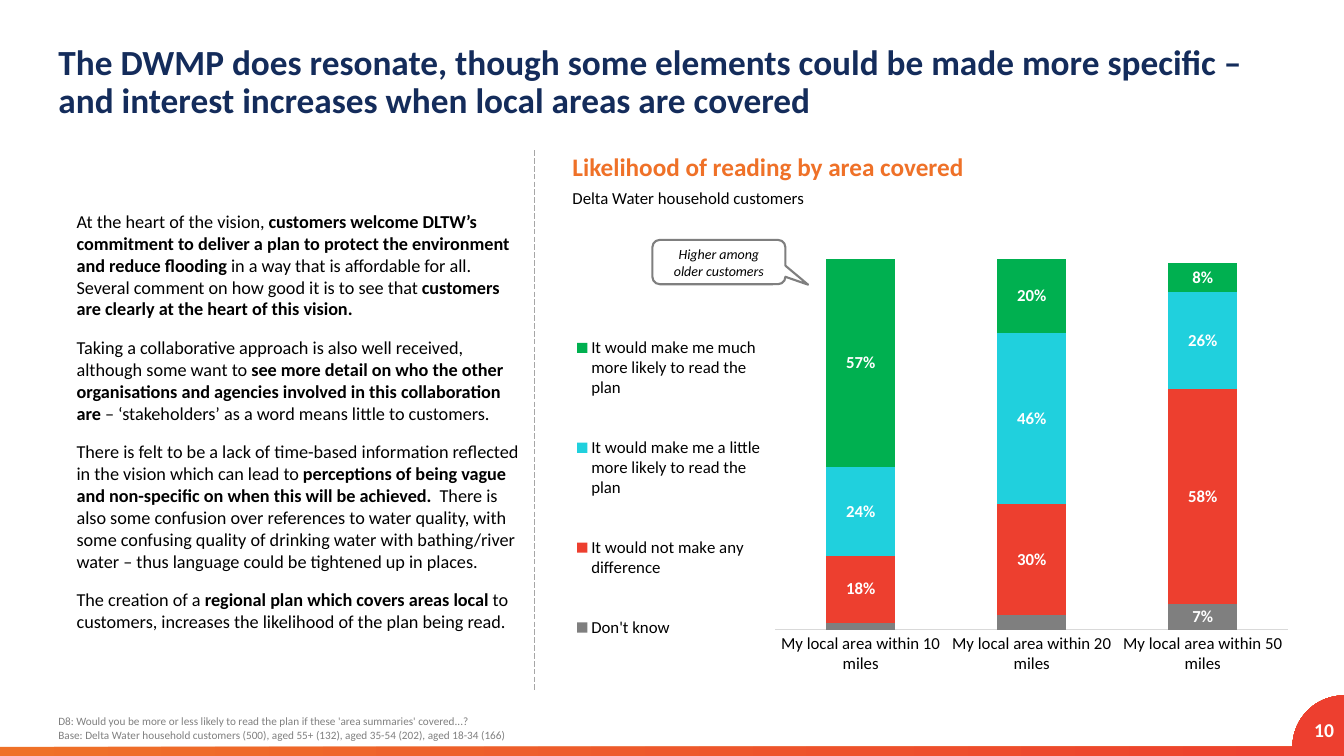
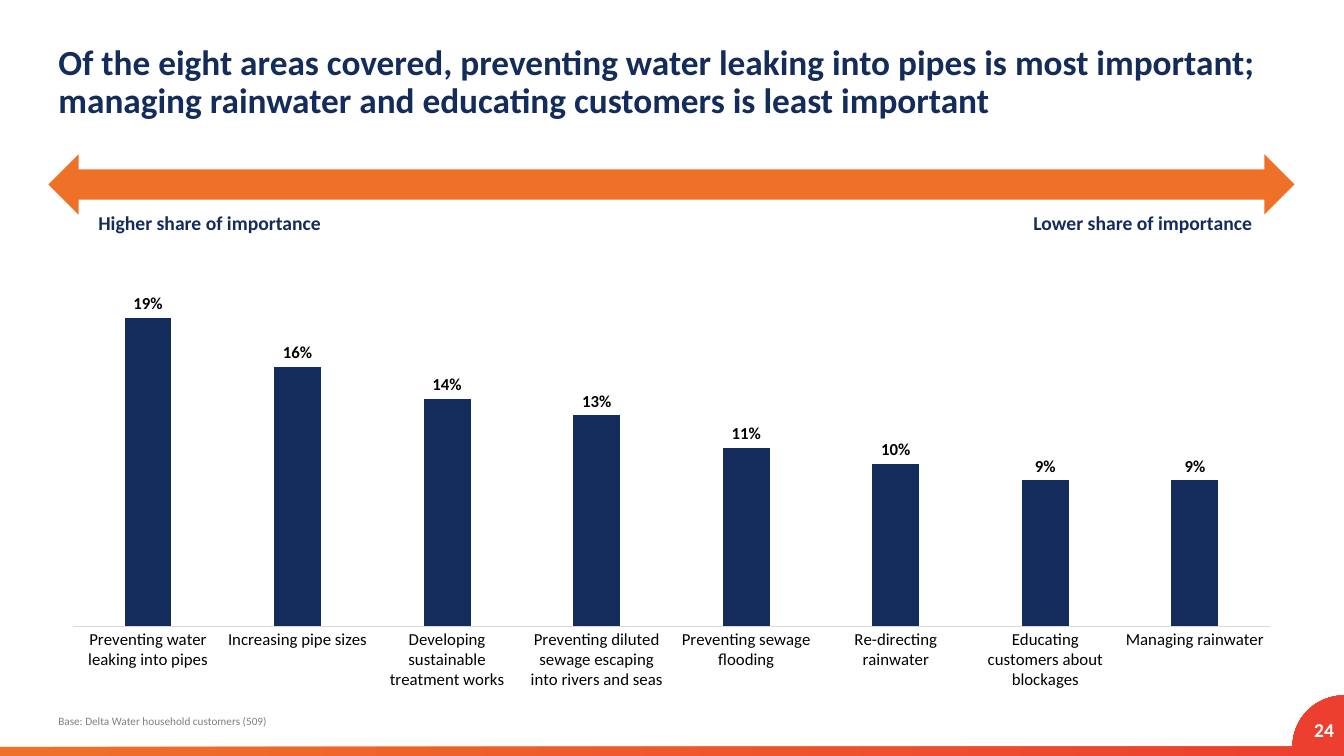
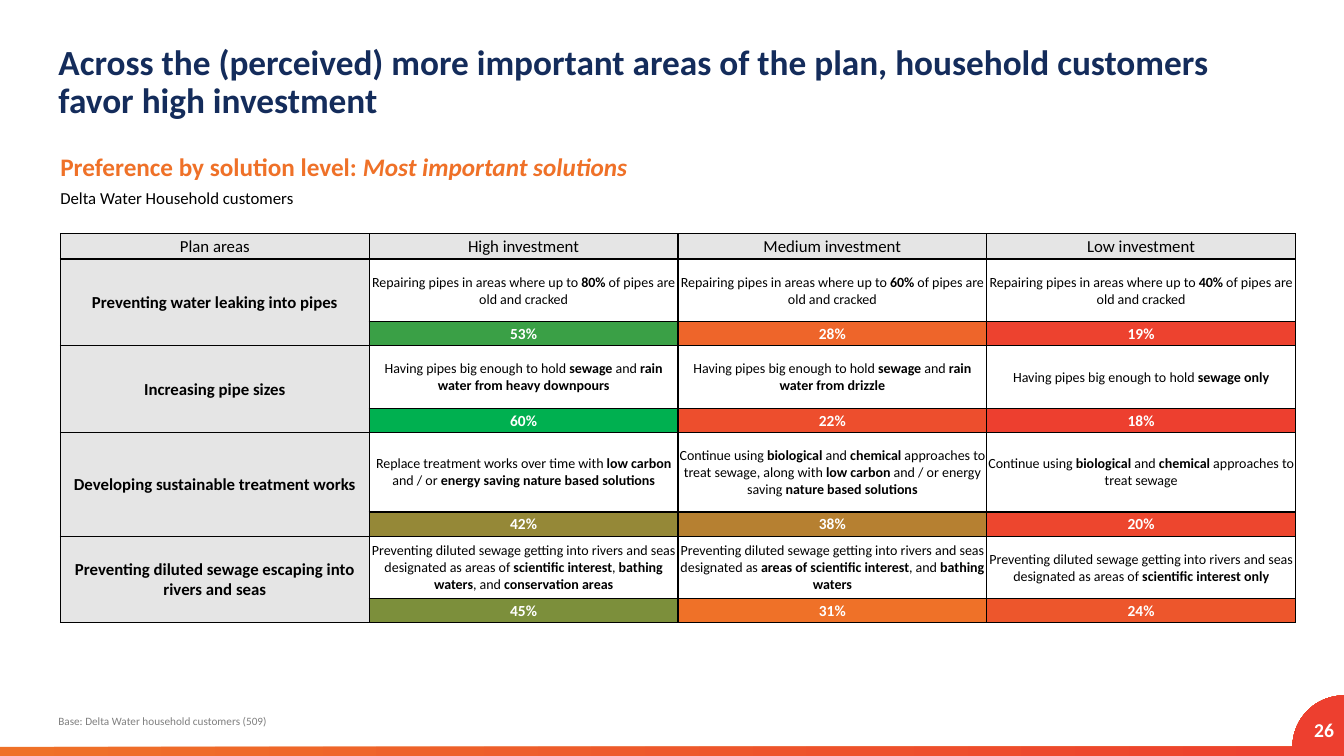
import math

from lxml import etree
from pptx import Presentation
from pptx import util as u
from pptx.chart import data
from pptx.dml.color import RGBColor
from pptx.enum import chart as charts
from pptx.enum import dml, shapes, text
from pptx.oxml import ns, parse_xml

FONT = "Calibri"
NAVY = RGBColor(0x14, 0x2C, 0x5B)
ORANGE = RGBColor(0xEF, 0x71, 0x28)
RED = RGBColor(0xED, 0x3F, 0x2F)
CYAN = RGBColor(0x20, 0xD0, 0xDD)
GREEN = RGBColor(0x00, 0xB0, 0x50)
GREY = RGBColor(0x7F, 0x7F, 0x7F)
DIVIDER_GREY = RGBColor(0xA6, 0xA6, 0xA6)
AXIS_GREY = RGBColor(0xD9, 0xD9, 0xD9)
HEADER_GREY = RGBColor(0xE5, 0xE5, 0xE5)
BLACK = RGBColor(0, 0, 0)
WHITE = RGBColor(0xFF, 0xFF, 0xFF)

WIDTH, HEIGHT = 13.33, 7.5
TITLE_AND_BODY, TITLE_ONLY = 1, 5
CENTER, RIGHT = text.PP_ALIGN.CENTER, text.PP_ALIGN.RIGHT
MIDDLE = text.MSO_ANCHOR.MIDDLE

VISION = [
    "At the heart of the vision, **customers welcome DLTW’s commitment to deliver a plan to "
    "protect the environment and reduce flooding **in a way that is affordable for all. Several "
    "comment on how good it is to see that **customers are clearly at the heart of this vision.**",
    "Taking a collaborative approach is also well received, although some want to **see more "
    "detail on who the other organisations and agencies involved in this collaboration are** – "
    "‘stakeholders’ as a word means little to customers.",
    "There is felt to be a lack of time-based information reflected in the vision which can lead "
    "to **perceptions of being vague and non-specific on when this will be achieved.  **There is "
    "also some confusion over references to water quality, with some confusing quality of "
    "drinking water with bathing/river water – thus language could be tightened up in places.",
    "The creation of a **regional plan which covers areas local **to customers, increases the "
    "likelihood of the plan being read.",
]

LIKELIHOOD = [
    ("Don't know", (0.02, 0.04, 0.07), GREY),
    ("It would not make any difference", (0.18, 0.3, 0.58), RED),
    ("It would make me a little more likely to read the plan", (0.24, 0.46, 0.26), CYAN),
    ("It would make me much more likely to read the plan", (0.57, 0.2, 0.08), GREEN),
]

IMPORTANCE = {
    "Preventing water leaking into pipes": 0.19,
    "Increasing pipe sizes": 0.16,
    "Developing sustainable treatment works": 0.14,
    "Preventing diluted sewage escaping into rivers and seas": 0.13,
    "Preventing sewage flooding": 0.11,
    "Re-directing rainwater": 0.1,
    "Educating customers about blockages": 0.09,
    "Managing rainwater": 0.09,
}

REPAIRING = "Repairing pipes in areas where up to **{}** of pipes are old and cracked"
PIPES = "Having pipes big enough to hold **sewage"
CONTINUE = "Continue using **biological** and **chemical** approaches to treat sewage"
SEWAGE = "Preventing diluted sewage getting into rivers and seas designated as "
HEADINGS = ["Plan areas", "High investment", "Medium investment", "Low investment"]
PLAN_AREAS = [
    ("Preventing water leaking into pipes", 0.62, [
        (REPAIRING.format("80%"), "53%", "3AA046"),
        (REPAIRING.format("60%"), "28%", "EE652A"),
        (REPAIRING.format("40%"), "19%", "ED422F")]),
    ("Increasing pipe sizes", 0.62, [
        (PIPES + "** and **rain water from heavy downpours**", "60%", "00B050"),
        (PIPES + "** and **rain water from drizzle**", "22%", "ED4E2D"),
        (PIPES + " only**", "18%", "ED3F2F")]),
    ("Developing sustainable treatment works", 0.79, [
        ("Replace treatment works over time with **low carbon **and / or "
         "**energy saving nature based solutions**", "42%", "958837"),
        (CONTINUE + ", along with **low carbon** and / or energy saving "
         "**nature based solutions**", "38%", "B68031"),
        (CONTINUE, "20%", "ED462E")]),
    ("Preventing diluted sewage escaping into rivers and seas", 0.62, [
        (SEWAGE + "areas of **scientific interest**, **bathing waters**, and "
         "**conservation areas**", "45%", "7C8F3B"),
        (SEWAGE + "**areas of scientific interest**, and **bathing waters**", "31%", "EF7128"),
        (SEWAGE + "areas of **scientific interest only**", "24%", "ED562C")]),
]


def set_format(target, formats):
    for name, value in formats.items():
        setattr(target, name, value)


def inches(box):
    return [u.Inches(value) for value in box]


def place(shape, box):
    set_format(shape, dict(zip(("left", "top", "width", "height"), inches(box))))


def set_font(font, size, color, **formats):
    set_format(font, {"name": FONT, "size": u.Pt(size), **formats})
    font.color.rgb = color


def fill_paragraph(paragraph, content, size, color, bold=False, italic=False, **formats):
    set_format(paragraph, formats)
    for index, part in enumerate(content.split("**")):
        if part:
            run = paragraph.add_run()
            run.text = part
            set_font(run.font, size, color, bold=bold or index % 2 == 1, italic=italic)


def fill_frame(frame, lines, size, color, frame_formats=None, **formats):
    set_format(frame, {"word_wrap": True, "auto_size": text.MSO_AUTO_SIZE.NONE,
                       **(frame_formats or {})})
    for index, line in enumerate(lines):
        paragraph = frame.add_paragraph() if index else frame.paragraphs[0]
        fill_paragraph(paragraph, line, size, color, **formats)


def add_text(slide, box, lines, size, color, frame_formats=None, **formats):
    shape = slide.shapes.add_textbox(*inches(box))
    fill_frame(shape.text_frame, lines, size, color, frame_formats, **formats)
    return shape


def add_master_band(presentation, slide):
    edge, radius = 7.41, 0.51
    angles = [math.radians(90 * step / 24) for step in range(25)]
    curve = [(WIDTH - radius * math.cos(angle), edge - radius * math.sin(angle))
             for angle in angles]
    points = [tuple(inches(point)) for point in [(WIDTH, HEIGHT), (0, HEIGHT), (0, edge), *curve]]
    builder = slide.shapes.build_freeform(*points[0])
    builder.add_line_segments(points[1:], close=True)
    band = builder.convert_to_shape()
    band.shadow.inherit = False
    band.line.fill.background()
    band.fill.gradient()
    band.fill.gradient_angle = 0
    for stop, position, color in zip(band.fill.gradient_stops, (0, 1), (ORANGE, RED)):
        stop.position = position
        stop.color.rgb = color
    presentation.slide_master.element.cSld.spTree.append(band.element)


def add_slide(presentation, layout, title, number, footer, title_width=12.36):
    slide = presentation.slides.add_slide(presentation.slide_layouts[layout])
    place(slide.shapes.title, (0.48, 0.4, title_width, 0.6))
    fill_frame(slide.shapes.title.text_frame, [title], 25.2, NAVY,
               {"vertical_anchor": text.MSO_ANCHOR.TOP},
               bold=True, line_spacing=0.9, alignment=text.PP_ALIGN.LEFT)
    add_text(slide, (12.39, 7.04, 0.94, 0.4), [str(number)], 14, WHITE,
             {"vertical_anchor": MIDDLE, "margin_top": 0, "margin_bottom": 0},
             bold=True, alignment=RIGHT)
    add_text(slide, (0.48, 7.02, 11.9, 0.36), footer, 8, GREY, line_spacing=1.1)
    return slide


def add_heading(slide, left, top, width, heading, subheading):
    spacing = {"line_spacing": 1.2, "space_after": u.Pt(12)}
    box = add_text(slide, (left, top, width, 0.38), [heading], 18, ORANGE,
                   {"margin_bottom": 0}, bold=True, **spacing)
    add_text(slide, (left, top + 0.38, width, 0.32), [subheading], 12, BLACK, **spacing)
    return box.text_frame.paragraphs[0]


def add_column_chart(slide, box, kind, categories, series, maximum, gap, overlap,
                     label_color, label_position=None):
    chart_data = data.CategoryChartData(number_format="0%")
    chart_data.categories = categories
    for name, values, _ in series:
        chart_data.add_series(name, values)
    chart = slide.shapes.add_chart(kind, *inches(box), chart_data).chart
    set_format(chart, {"has_title": False, "has_legend": False})
    set_font(chart.font, 10, BLACK)
    set_format(chart.value_axis, {"visible": False, "has_major_gridlines": False,
                                  "minimum_scale": 0, "maximum_scale": maximum})
    axis = chart.category_axis
    axis.major_tick_mark = charts.XL_TICK_MARK.NONE
    set_font(axis.tick_labels.font, 12, BLACK)
    axis.format.line.color.rgb = AXIS_GREY
    axis.format.line.width = u.Pt(0.75)
    plot = chart.plots[0]
    set_format(plot, {"gap_width": gap, "overlap": overlap, "vary_by_categories": False})
    for column, (_, _, color) in zip(plot.series, series):
        column.format.fill.solid()
        column.format.fill.fore_color.rgb = color
        labels = column.data_labels
        set_format(labels, {"show_value": True, "number_format_is_linked": False,
                            "number_format": '[<0.05]"";0%'})
        if label_position is not None:
            labels.position = label_position
        set_font(labels.font, 12, label_color, bold=True)
    return chart


def set_chart_layout(parent, box, inner=False):
    for old in parent.findall(ns.qn("c:layout")):
        parent.remove(old)
    target = '<c:layoutTarget val="inner"/>' if inner else ""
    modes = "".join(f'<c:{axis}Mode val="edge"/>' for axis in "xy")
    sizes = "".join(f'<c:{name} val="{value}"/>' for name, value in zip("xywh", box))
    layout = parse_xml(f'<c:layout {ns.nsdecls("c")}><c:manualLayout>{target}{modes}{sizes}'
                       "</c:manualLayout></c:layout>")
    parent.insert(0 if inner else 1, layout)


def add_vision_text(slide, box):
    body = slide.placeholders[1]
    place(body, box)
    fill_frame(body.text_frame, VISION, 13, BLACK,
               {"vertical_anchor": MIDDLE, "margin_left": u.Inches(0.16),
                "margin_right": u.Inches(0.16)},
               space_before=u.Pt(6), space_after=u.Pt(6), alignment=text.PP_ALIGN.LEFT)
    for paragraph in body.text_frame.paragraphs:
        properties = paragraph._p.get_or_add_pPr()
        properties.set("marL", "0")
        properties.set("indent", "0")
        etree.SubElement(properties, ns.qn("a:buNone"))


def add_divider(slide, left, top, bottom):
    divider = slide.shapes.add_connector(shapes.MSO_CONNECTOR.STRAIGHT,
                                         *inches((left, top, left, bottom)))
    divider.line.color.rgb = DIVIDER_GREY
    set_format(divider.line, {"width": u.Pt(0.5), "dash_style": dml.MSO_LINE.LONG_DASH})
    etree.SubElement(divider.element.spPr, ns.qn("a:effectLst"))


def add_callout(slide, box, content):
    callout = slide.shapes.add_shape(shapes.MSO_SHAPE.ROUNDED_RECTANGULAR_CALLOUT, *inches(box))
    for index, value in enumerate((0.67, 0.51, 0.17)):
        callout.adjustments[index] = value
    callout.shadow.inherit = False
    callout.fill.background()
    callout.line.color.rgb = GREY
    callout.line.width = u.Pt(1.5)
    fill_frame(callout.text_frame, [content], 10, BLACK, {"vertical_anchor": MIDDLE},
               italic=True, alignment=CENTER)


def add_likelihood_chart(slide, box):
    left, top, width, height = box
    chart = add_column_chart(
        slide, box, charts.XL_CHART_TYPE.COLUMN_STACKED,
        [f"My local area within {miles} miles" for miles in (10, 20, 50)],
        LIKELIHOOD, 1, 150, 100, WHITE)
    chart.has_legend = True
    set_format(chart.legend, {"position": charts.XL_LEGEND_POSITION.LEFT,
                              "include_in_layout": False})
    set_font(chart.legend.font, 12, BLACK)
    set_chart_layout(chart.legend._element, (0.01, 0.09, 0.27, 0.88))
    set_chart_layout(chart.plots[0]._element.getparent(), (0.29, 0, 0.7, 0.86), inner=True)
    add_callout(slide, (left + 0.89, top - 0.19, 1.32, 0.44), "Higher among older customers")


def add_importance_scale(slide, box):
    left, top, width, height = box
    arrow = slide.shapes.add_shape(shapes.MSO_SHAPE.LEFT_RIGHT_ARROW, *inches(box))
    arrow.shadow.inherit = False
    arrow.fill.solid()
    arrow.fill.fore_color.rgb = ORANGE
    arrow.line.fill.background()
    for level, offset, label_width in (("Higher", 0.24, 2.72), ("Lower", width - 2.78, 2.55)):
        add_text(slide, (left + offset, top + 0.45, label_width, 0.44),
                 [f"{level} share of importance"], 14, NAVY,
                 {"vertical_anchor": MIDDLE, "word_wrap": False},
                 bold=True, alignment=CENTER, line_spacing=1.1, space_after=u.Pt(6))


def fill_cell(cell, content, size, color=BLACK, fill=None, bold=False):
    margins = {f"margin_{side}": u.Inches(0.01) for side in ("left", "right", "top")}
    set_format(cell, {**margins, "margin_bottom": 0, "vertical_anchor": MIDDLE})
    fill_paragraph(cell.text_frame.paragraphs[0], content, size, color, bold, alignment=CENTER)
    if fill is None:
        cell.fill.background()
    else:
        cell.fill.solid()
        cell.fill.fore_color.rgb = fill


def add_borders(cell):
    properties = cell._tc.get_or_add_tcPr()
    for index, side in enumerate("LRTB"):
        properties.insert(index, parse_xml(
            f'<a:ln{side} {ns.nsdecls("a")} w="12700"><a:solidFill>'
            f'<a:srgbClr val="{BLACK}"/></a:solidFill></a:ln{side}>'))


def add_investment_table(slide, left, top, width):
    heights = [0.25]
    for _, height, _ in PLAN_AREAS:
        heights += [height, 0.24]
    box = inches((left, top, width, sum(heights)))
    table = slide.shapes.add_table(len(heights), len(HEADINGS), *box).table
    set_format(table, {"first_row": False, "horz_banding": False})
    for row, height in zip(table.rows, heights):
        row.height = u.Inches(height)
    for column in table.columns:
        column.width = u.Inches(width / len(HEADINGS))
    for column, heading in enumerate(HEADINGS):
        fill_cell(table.cell(0, column), heading, 12, fill=HEADER_GREY)
    for index, (area, _, levels) in enumerate(PLAN_AREAS):
        row = 1 + 2 * index
        table.cell(row, 0).merge(table.cell(row + 1, 0))
        fill_cell(table.cell(row, 0), area, 12, fill=HEADER_GREY, bold=True)
        for column, (solution, share, color) in enumerate(levels, 1):
            fill_cell(table.cell(row, column), solution, 10)
            fill_cell(table.cell(row + 1, column), share, 11, WHITE,
                      RGBColor.from_string(color), True)
    for cell in table.iter_cells():
        add_borders(cell)


def build_likelihood_slide(presentation):
    slide = add_slide(
        presentation, TITLE_AND_BODY,
        "The DWMP does resonate, though some elements could be made more specific – "
        "and interest increases when local areas are covered", 10,
        ["D8: Would you be more or less likely to read the plan if these 'area summaries' "
         "covered...?",
         "Base: Delta Water household customers (500), aged 55+ (132), aged 35-54 (202), "
         "aged 18-34 (166)"])
    add_master_band(presentation, slide)
    add_vision_text(slide, (0.6, 1.71, 4.7, 4.94))
    add_heading(slide, 5.58, 1.39, 7.27, "Likelihood of reading by area covered",
                "Delta Water household customers")
    add_likelihood_chart(slide, (5.58, 2.57, 7.27, 4.28))
    add_divider(slide, 5.3, 1.49, 6.85)


def build_importance_slide(presentation):
    slide = add_slide(
        presentation, TITLE_ONLY,
        "Of the eight areas covered, preventing water leaking into pipes is most important; "
        "managing rainwater and educating customers is least important", 24,
        ["Base: Delta Water household customers (509)"], 12.61)
    add_column_chart(slide, (0.48, 1.27, 12.36, 5.69), charts.XL_CHART_TYPE.COLUMN_CLUSTERED,
                     list(IMPORTANCE), [("Series 1", list(IMPORTANCE.values()), NAVY)],
                     0.3, 219, -27, BLACK, charts.XL_LABEL_POSITION.OUTSIDE_END)
    add_importance_scale(slide, (0.48, 1.53, 12.36, 0.6))


def build_preference_slide(presentation):
    slide = add_slide(
        presentation, TITLE_ONLY,
        "Across the (perceived) more important areas of the plan, household customers "
        "favor high investment", 26, ["Base: Delta Water household customers (509)"])
    heading = add_heading(slide, 0.5, 1.39, 6.75, "Preference by solution level: ",
                          "Delta Water Household customers")
    fill_paragraph(heading, "Most important solutions", 18, ORANGE, bold=True, italic=True)
    add_investment_table(slide, 0.6, 2.32, 12.25)


def main():
    presentation = Presentation()
    set_format(presentation, {"slide_width": u.Inches(WIDTH), "slide_height": u.Inches(HEIGHT)})
    build_likelihood_slide(presentation)
    build_importance_slide(presentation)
    build_preference_slide(presentation)
    presentation.save("out.pptx")


if __name__ == "__main__":
    main()
